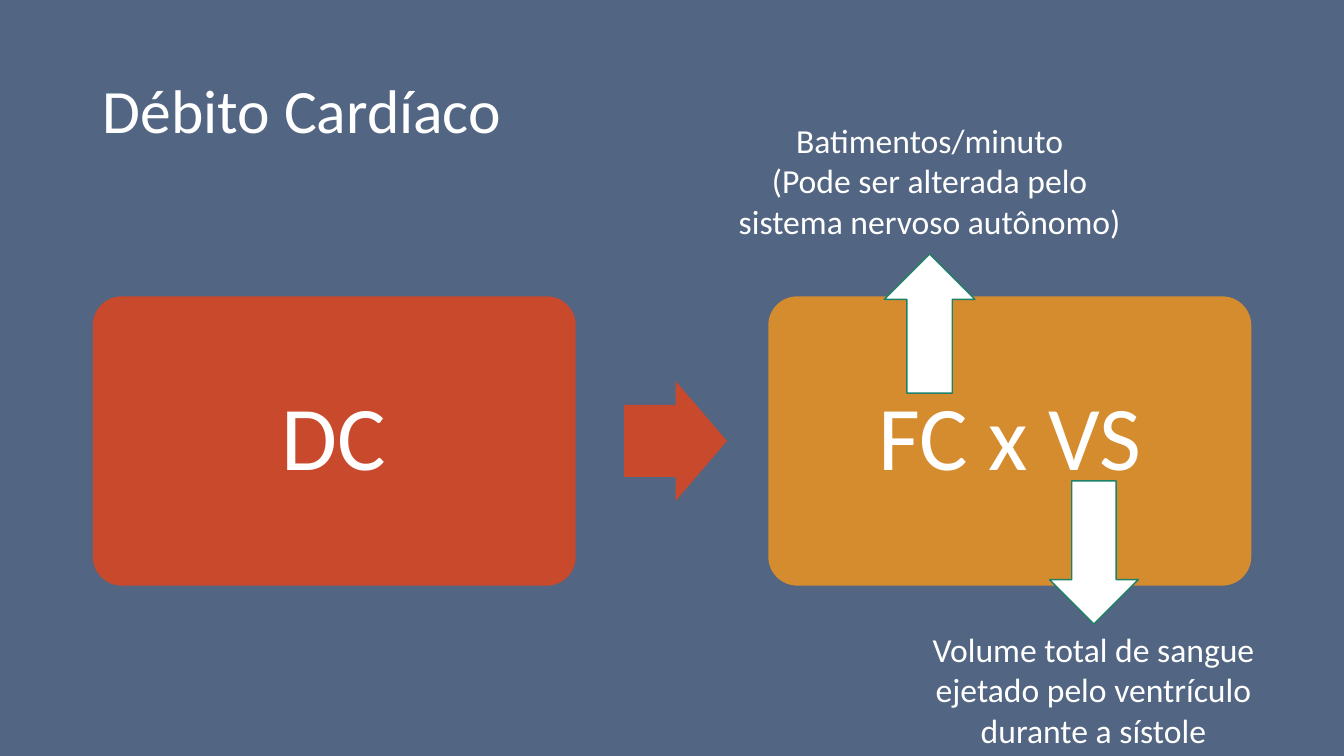
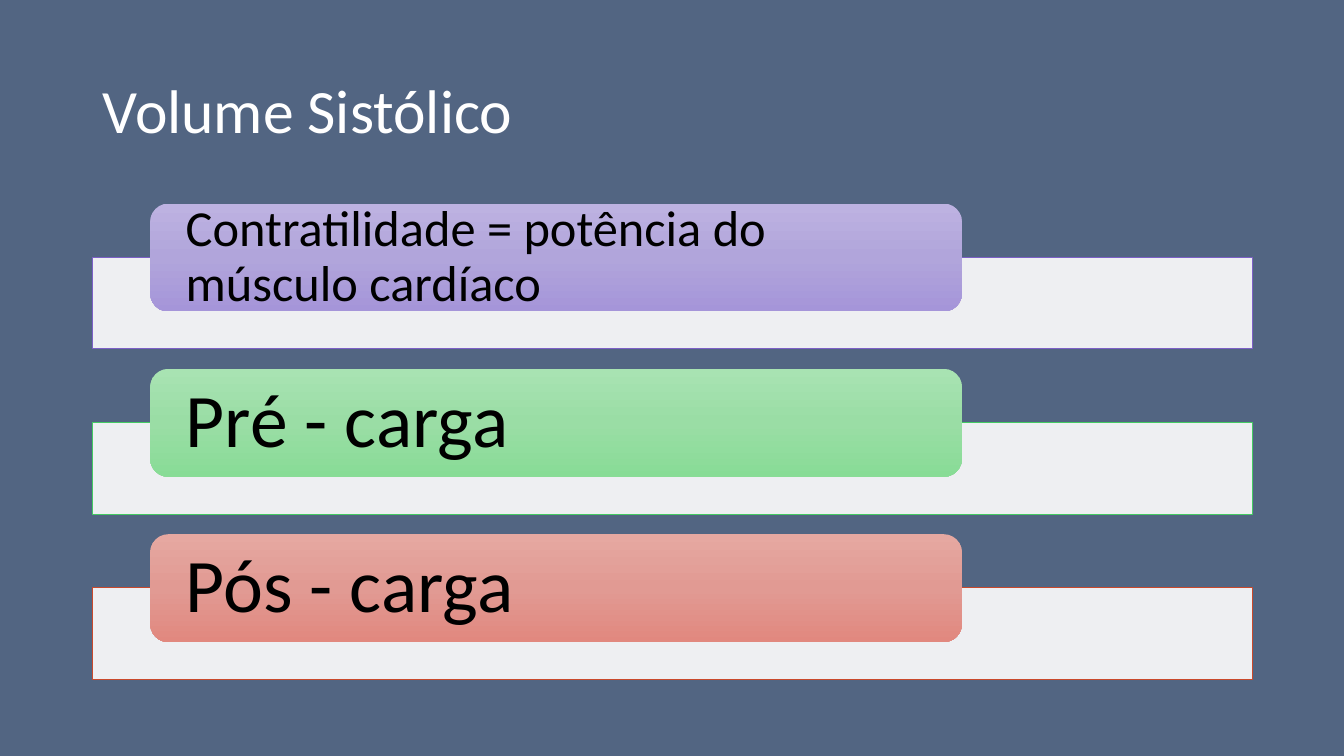
"""Build two slides on cardiac output and stroke volume."""
from copy import deepcopy
from dataclasses import dataclass
from typing import NamedTuple

from lxml.etree import SubElement
from pptx import Presentation
from pptx.dml.color import RGBColor
from pptx.enum.shapes import MSO_SHAPE
from pptx.enum.text import MSO_ANCHOR, PP_ALIGN
from pptx.oxml.ns import qn
from pptx.util import Pt

SCALE = 9144


@dataclass(frozen=True)
class Theme:
    """Hold the colours, font and type sizes."""

    font: str = "Calibri"
    back: str = "526582"
    white: str = "FFFFFF"
    black: str = "000000"
    red: str = "C9492C"
    gold: str = "D58C2E"
    green: str = "1E8168"
    title: int = 44
    huge: int = 65
    large: int = 54
    mid: int = 36
    note: int = 24


class Box(NamedTuple):
    """Give a frame in px."""

    left: int
    top: int
    width: int
    height: int

    def emu(self) -> list[int]:
        """Return the frame in EMU."""
        return [side * SCALE for side in self]


@dataclass(frozen=True)
class Style:
    """Describe how a text block is set."""

    size: int
    hue: str
    align: PP_ALIGN = PP_ALIGN.CENTER
    anchor: MSO_ANCHOR = MSO_ANCHOR.MIDDLE
    pad_x: int = 10
    pad_y: int = 5
    pitch: float = 0.9


@dataclass(frozen=True)
class Block:
    """Describe a filled shape with an optional outline and label."""

    kind: MSO_SHAPE
    box: Box
    fill: str
    edge: str = ""
    width: float = 1
    tune: tuple[float, ...] = ()
    label: str = ""
    alpha: int = 100


@dataclass(frozen=True)
class Note:
    """Describe a centred caption."""

    box: Box
    lines: tuple[str, ...]


@dataclass(frozen=True)
class Row:
    """Describe a pill lying over a pale band."""

    label: str
    size: int
    edge: str
    stops: tuple[str, str, str]


THEME = Theme()
HEAD = Style(THEME.title, THEME.white, PP_ALIGN.LEFT)
CARD = Style(THEME.huge, THEME.white, pad_x=27, pad_y=27)
NOTE = Style(THEME.note, THEME.white, anchor=MSO_ANCHOR.TOP, pitch=1.0)

BLOCKS = (
    Block(MSO_SHAPE.ROUNDED_RECTANGLE, Box(92, 294, 479, 287), THEME.red,
          tune=(0.1,), label="DC"),
    Block(MSO_SHAPE.RIGHT_ARROW, Box(619, 378, 102, 119), THEME.red,
          tune=(0.6, 0.5)),
    Block(MSO_SHAPE.ROUNDED_RECTANGLE, Box(762, 294, 479, 287), THEME.gold,
          tune=(0.1,), label="FC x VS"),
    Block(MSO_SHAPE.UP_ARROW, Box(877, 252, 90, 138), THEME.white, THEME.green),
    Block(MSO_SHAPE.DOWN_ARROW, Box(1041, 477, 88, 142), THEME.white, THEME.green),
)
NOTES = (
    Note(Box(716, 114, 412, 131),
         ("Batimentos/minuto", "(Pode ser alterada pelo sistema nervoso autônomo)")),
    Note(Box(897, 619, 375, 131),
         ("Volume total de sangue ejetado pelo ventrículo durante a sístole",)),
)
ROWS = (
    Row("Contratilidade = potência do músculo cardíaco", THEME.mid, "7C60C6",
        ("BDB2E1", "B1A5DB", "A595D9")),
    Row("Pré - carga", THEME.large, "44CA63", ("A8E3B2", "9ADDA5", "88DC96")),
    Row("Pós - carga", THEME.large, THEME.red, ("E6A8A1", "E19A93", "E1887F")),
)
ROW_TOP, ROW_STEP, BAND_DROP = 202, 164, 53


def tint(hue: str) -> RGBColor:
    """Turn a hex string into a colour."""
    return RGBColor.from_string(hue)


def write(shape, lines: tuple[str, ...], style: Style) -> None:
    """Set text lines in a shape, one run each."""
    frame = shape.text_frame
    frame.word_wrap = True
    frame.vertical_anchor = style.anchor
    frame.margin_left = frame.margin_right = style.pad_x * SCALE
    frame.margin_top = frame.margin_bottom = style.pad_y * SCALE
    for spot, line in enumerate(lines):
        para = frame.add_paragraph() if spot else frame.paragraphs[0]
        para.alignment = style.align
        para.line_spacing = style.pitch
        run = para.add_run()
        run.text = line
        run.font.name = THEME.font
        run.font.size = Pt(style.size)
        run.font.color.rgb = tint(style.hue)


def add_text(slide, box: Box, lines: tuple[str, ...], style: Style) -> None:
    """Add a text box."""
    write(slide.shapes.add_textbox(*box.emu()), lines, style)


def add_block(slide, block: Block):
    """Add a shape with its fill, outline and label."""
    shape = slide.shapes.add_shape(block.kind, *block.box.emu())
    shape.shadow.inherit = False
    shape.fill.solid()
    shape.fill.fore_color.rgb = tint(block.fill)
    if block.alpha < 100:
        hue = shape._element.spPr.find(f"{qn('a:solidFill')}/{qn('a:srgbClr')}")
        SubElement(hue, qn("a:alpha"), val=str(block.alpha * 1000))
    if block.edge:
        shape.line.color.rgb = tint(block.edge)
        shape.line.width = Pt(block.width)
    else:
        shape.line.fill.background()
    for spot, value in enumerate(block.tune):
        shape.adjustments[spot] = value
    if block.label:
        write(shape, (block.label,), CARD)
    return shape


def shade(shape, hues: tuple[str, str, str]) -> None:
    """Fill a shape with a three-stop gradient from top to bottom."""
    shape.fill.gradient()
    shape.fill.gradient_angle = 270
    stops = shape._element.spPr.find(f"{qn('a:gradFill')}/{qn('a:gsLst')}")
    stops.append(deepcopy(stops[0]))
    for spot, (stop, hue) in enumerate(zip(shape.fill.gradient_stops, hues)):
        stop.position = spot / 2
        stop.color.rgb = tint(hue)


def add_row(slide, row: Row, top: int) -> None:
    """Add a band and the pill on it."""
    add_block(slide, Block(MSO_SHAPE.RECTANGLE, Box(92, top + BAND_DROP, 1150, 91),
                           THEME.white, row.edge, 0.5, alpha=90))
    pill = add_block(slide, Block(MSO_SHAPE.ROUNDED_RECTANGLE,
                                  Box(149, top, 805, 107), row.stops[0]))
    shade(pill, row.stops)
    write(pill, (row.label,),
          Style(row.size, THEME.black, PP_ALIGN.LEFT, pad_x=30, pad_y=0))


def add_slide(deck, title: str):
    """Add a blank slide with a title."""
    slide = deck.slides.add_slide(deck.slide_layouts[6])
    add_text(slide, Box(92, 40, 1150, 145), (title,), HEAD)
    return slide


def main() -> None:
    """Build and save the deck."""
    deck = Presentation()
    deck.slide_width, deck.slide_height = 1333 * SCALE, 750 * SCALE
    back = deck.slide_master.background.fill
    back.solid()
    back.fore_color.rgb = tint(THEME.back)

    output = add_slide(deck, "Débito Cardíaco")
    for block in BLOCKS:
        add_block(output, block)
    for note in NOTES:
        add_text(output, note.box, note.lines, NOTE)

    volume = add_slide(deck, "Volume Sistólico")
    for spot, row in enumerate(ROWS):
        add_row(volume, row, ROW_TOP + spot * ROW_STEP)

    deck.save("out.pptx")


if __name__ == "__main__":
    main()
